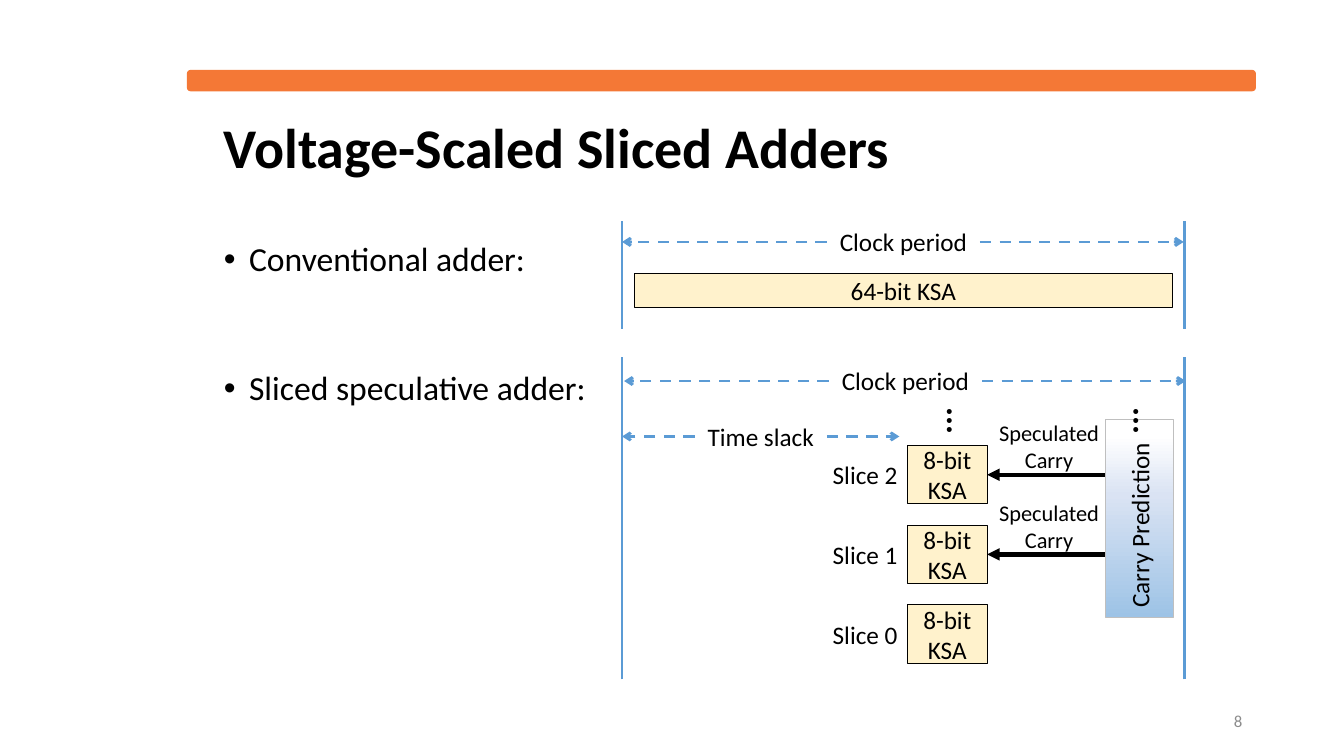
from copy import deepcopy

from lxml import etree
from pptx import Presentation
from pptx.dml.color import RGBColor
from pptx.enum.dml import MSO_LINE
from pptx.enum.shapes import MSO_CONNECTOR, MSO_SHAPE
from pptx.enum.text import MSO_ANCHOR, PP_ALIGN
from pptx.oxml.ns import qn
from pptx.util import Emu, Pt

LEFT, CENTER, RIGHT = PP_ALIGN.LEFT, PP_ALIGN.CENTER, PP_ALIGN.RIGHT
TOP, MIDDLE = MSO_ANCHOR.TOP, MSO_ANCHOR.MIDDLE
RECTANGLE, ROUNDED = MSO_SHAPE.RECTANGLE, MSO_SHAPE.ROUNDED_RECTANGLE
STRAIGHT, DASH = MSO_CONNECTOR.STRAIGHT, MSO_LINE.DASH
RIGHT_SIDE = 3

FONT = "Calibri"
BLACK, GRAY, BORDER = "000000", "8C8C8C", "BFBFBF"
BLUE, ORANGE, CREAM = "5B9BD5", "F47836", "FFF2CC"
PREDICTION_STOPS = [(0.08, "FFFFFF"), (0.38, "DAE3F3"), (1.0, "9DC3E6")]


def px(value):
    """100 px to the inch."""
    return Emu(value * 9144)


def color(hex_string):
    return RGBColor.from_string(hex_string)


def place(shape, left, top, width, height):
    box = {"left": left, "top": top, "width": width, "height": height}
    for name, value in box.items():
        setattr(shape, name, px(value))


def format_paragraph(paragraph, size, align=CENTER, hex_color=BLACK, bold=False):
    paragraph.alignment = align
    for name, value in {"name": FONT, "size": Pt(size), "bold": bold}.items():
        setattr(paragraph.font, name, value)
    paragraph.font.color.rgb = color(hex_color)


def write(shape, lines, size=18, align=CENTER, hex_color=BLACK, bold=False,
          anchor=MIDDLE, wrap=True):
    frame = shape.text_frame
    frame.word_wrap = wrap
    frame.vertical_anchor = anchor
    frame.text = "\n".join(lines)
    for paragraph in frame.paragraphs:
        format_paragraph(paragraph, size, align, hex_color, bold)


def add_label(slide, box, lines, rotation=0, **text_format):
    label = slide.shapes.add_textbox(*map(px, box))
    label.rotation = rotation
    write(label, lines, **{"anchor": TOP, **text_format})


def add_block(slide, box, fill=CREAM, border=BLACK, border_width=0.75, kind=RECTANGLE):
    block = slide.shapes.add_shape(kind, *map(px, box))
    block.shadow.inherit = False
    block.fill.solid()
    block.fill.fore_color.rgb = color(fill)
    block.line.color.rgb = color(border)
    block.line.width = Pt(border_width)
    return block


def add_line(slide, start, end, hex_color=BLUE, width=2, dash=None, head=None):
    line = slide.shapes.add_connector(STRAIGHT, *map(px, (*start, *end)))
    line.line.color.rgb = color(hex_color)
    line.line.width = Pt(width)
    if dash:
        line.line.dash_style = dash
    if head:
        etree.SubElement(line.line._get_or_add_ln(), qn("a:tailEnd"), type=head)
    etree.SubElement(line._element.spPr, qn("a:effectLst"))
    return line


def add_time_span(slide, text, left, text_left, text_right, right, y):
    """A label between two dashed arrows that point outwards."""
    for start, end in ((text_left, left), (text_right, right)):
        add_line(slide, (start, y), (end, y), dash=DASH, head="arrow")
    add_label(slide, (text_left, y - 20, text_right - text_left, 40), [text])


def fill_gradient(shape, stops, angle):
    shape.fill.gradient()
    shape.fill.gradient_angle = angle
    stop_list = shape._element.spPr.find(qn("a:gradFill")).find(qn("a:gsLst"))
    while len(stop_list) < len(stops):
        stop_list.append(deepcopy(stop_list[-1]))
    for stop, (position, hex_color) in zip(shape.fill.gradient_stops, stops):
        stop.position = position
        stop.color.rgb = color(hex_color)


def add_bullets(body, lines, gap):
    body.text_frame.text = "\n".join(lines)
    for index, paragraph in enumerate(body.text_frame.paragraphs):
        properties = paragraph._p.get_or_add_pPr()
        properties.set("marL", str(px(25)))
        properties.set("indent", str(-px(25)))
        etree.SubElement(properties, qn("a:buFont"), typeface="Arial")
        etree.SubElement(properties, qn("a:buChar"), char="•")
        paragraph.line_spacing = 0.9
        paragraph.space_before = Pt(gap if index else 0)
        format_paragraph(paragraph, 24, LEFT)


def add_slices(slide):
    for number in range(3):
        top = 600 - 79 * number
        block = add_block(slide, (900, top, 79, 58))
        write(block, ["8-bit KSA"])
        add_label(slide, (815, top + 9, 85, 40), [f"Slice {number}"],
                  align=RIGHT, wrap=False)
        if number:
            middle = top + 29
            arrow = add_line(slide, (1096, middle), (979, middle), BLACK, 3,
                             head="triangle")
            arrow.end_connect(block, RIGHT_SIDE)
            add_label(slide, (980, top - 31, 121, 64), ["Speculated", "Carry"], size=16)


def main():
    presentation = Presentation()
    presentation.slide_width, presentation.slide_height = px(1333), px(750)
    slide = presentation.slides.add_slide(presentation.slide_layouts[1])

    # Heading bar, title and list
    add_block(slide, (186, 70, 1059, 20), ORANGE, ORANGE, 1, ROUNDED)
    title, body = slide.placeholders
    place(title, 212, 104, 1029, 91)
    write(title, ["Voltage-Scaled Sliced Adders"], 40, LEFT, bold=True)
    title.text_frame.paragraphs[0].line_spacing = 0.9
    place(body, 212, 236, 1038, 404)
    add_bullets(body, ["Conventional adder:", "Sliced speculative adder:"], gap=66)

    # Clock boundaries of both diagrams
    for top, bottom in ((219, 326), (354, 674)):
        for x in (617, 1175):
            add_line(slide, (x, bottom), (x, top))

    # Conventional adder
    add_time_span(slide, "Clock period", 617, 820, 972, 1174, 240)
    write(add_block(slide, (629, 271, 534, 34)), ["64-bit KSA"])

    # Sliced adder
    add_time_span(slide, "Clock period", 619, 822, 974, 1176, 378)
    add_time_span(slide, "Time slack", 617, 689, 820, 892, 433)
    add_slices(slide)

    # Carry prediction, turned to read upwards
    prediction = add_block(slide, (1032, 481, 196, 67), border=BORDER)
    prediction.rotation = 270
    fill_gradient(prediction, PREDICTION_STOPS, 180)
    write(prediction, ["Carry Prediction"], align=LEFT)

    # Further slices
    for left in (929, 1114):
        add_label(slide, (left, 393, 47, 50), ["..."], rotation=90, size=24,
                  align=LEFT, bold=True, wrap=False)

    # Slide number
    add_label(slide, (942, 695, 300, 40), ["8"], size=12, align=RIGHT,
              hex_color=GRAY, anchor=MIDDLE)

    presentation.save("out.pptx")


if __name__ == "__main__":
    main()
